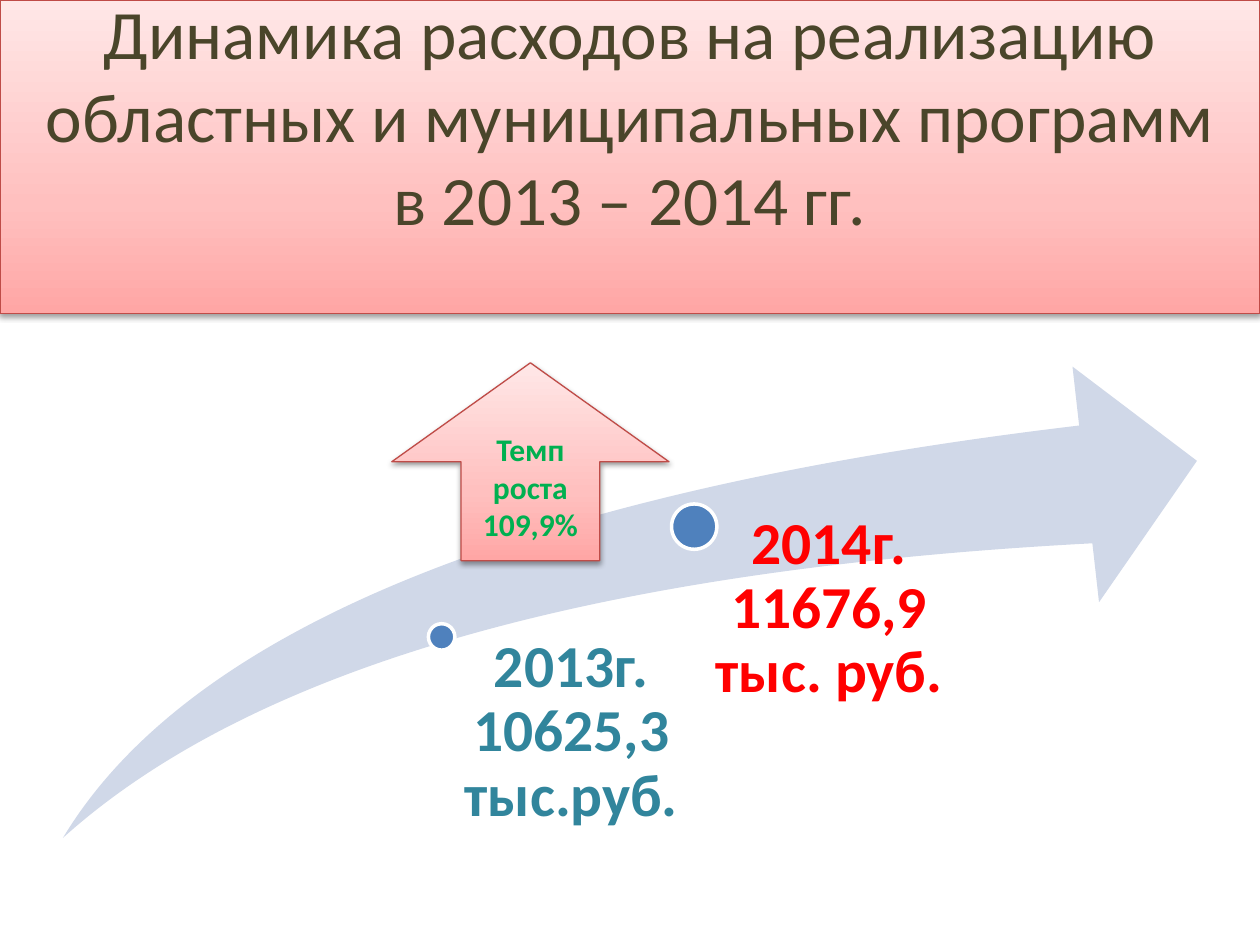
"""Build a slide on the growth of programme spending in 2013–2014."""
from copy import deepcopy

from lxml import etree
from pptx import Presentation
from pptx import util as u
from pptx.dml.color import RGBColor
from pptx.enum import shapes, text
from pptx.oxml.ns import qn

COLORS = {
    "swoosh": "D0D8E8", "marker": "4F81BD", "white": "FFFFFF",
    "border": "BF4C48", "shadow": "000000", "title": "4A452A",
    "year_2013": "31859C", "year_2014": "FF0000", "growth": "00B050",
}
GRADIENT = [(0, "FFA6A5"), (0.35, "FFC0BF"), (1, "FFE7E7")]


def write_text(shape, content, color, size, bold=False, spacing=None, after=None,
               anchor=text.MSO_ANCHOR.TOP, insets=(0.1, 0.05, 0.1, 0.05)):
    frame = shape.text_frame
    frame.word_wrap = True
    frame.auto_size = text.MSO_AUTO_SIZE.NONE
    frame.vertical_anchor = anchor
    (frame.margin_left, frame.margin_top,
     frame.margin_right, frame.margin_bottom) = map(u.Inches, insets)
    frame.text = content
    for paragraph in frame.paragraphs:
        paragraph.alignment = text.PP_ALIGN.CENTER
        paragraph.line_spacing = spacing
        paragraph.space_after = after
        for run in paragraph.runs:
            run.font.name = "Calibri"
            run.font.size = u.Pt(size)
            run.font.bold = bold
            run.font.color.rgb = RGBColor.from_string(COLORS[color])


def style_panel(shape):
    shape.fill.gradient()
    shape.fill.gradient_angle = 90
    properties = shape._element.spPr
    stop_list = properties.find(".//" + qn("a:gsLst"))
    stop_list.append(deepcopy(stop_list[0]))
    for stop, (position, color) in zip(shape.fill.gradient_stops, GRADIENT):
        stop.position = position
        stop.color.rgb = RGBColor.from_string(color)
    shape.line.color.rgb = RGBColor.from_string(COLORS["border"])
    shape.line.width = u.Pt(0.75)
    shape.shadow.inherit = False
    shadow = etree.SubElement(
        properties.find(qn("a:effectLst")), qn("a:outerShdw"),
        blurRad=str(u.Pt(3.1)), dist=str(u.Pt(1.6)), dir="5400000", rotWithShape="0")
    shadow_color = etree.SubElement(shadow, qn("a:srgbClr"), val=COLORS["shadow"])
    etree.SubElement(shadow_color, qn("a:alpha"), val="38000")


presentation = Presentation()
presentation.slide_width = u.Inches(10)
presentation.slide_height = u.Inches(7.5)
slide = presentation.slides.add_slide(presentation.slide_layouts[5])

title = slide.shapes.title
title.left, title.top, title.width, title.height = map(u.Inches, (0, 0, 10, 2.49))
style_panel(title)
write_text(title, "Динамика расходов на реализацию областных и муниципальных программ\n"
           "в 2013 – 2014 гг.", "title", 39.6,
           anchor=text.MSO_ANCHOR.MIDDLE, insets=(0.1, 0, 0.1, 0.67))

swoosh = slide.shapes.add_shape(
    shapes.MSO_SHAPE.SWOOSH_ARROW, *map(u.Inches, (0.5, 2.91, 9, 3.74)))
swoosh.adjustments[0] = 0.25
swoosh.adjustments[1] = 0.25
swoosh.shadow.inherit = False
swoosh.fill.solid()
swoosh.fill.fore_color.rgb = RGBColor.from_string(COLORS["swoosh"])
swoosh.line.fill.background()

milestones = [
    ((3.4, 4.95, 0.21, 0.21), (3.51, 5.05, 1.94, 1.6), 0.11,
     "2013г. 10625,3 тыс.руб.", "year_2013"),
    ((5.33, 4, 0.36, 0.36), (5.44, 4.07, 2.09, 2.68), 0.19,
     "2014г. 11676,9 тыс. руб.", "year_2014"),
]
for marker_box, label_box, inset, content, color in milestones:
    marker = slide.shapes.add_shape(shapes.MSO_SHAPE.OVAL, *map(u.Inches, marker_box))
    marker.shadow.inherit = False
    marker.fill.solid()
    marker.fill.fore_color.rgb = RGBColor.from_string(COLORS["marker"])
    marker.line.color.rgb = RGBColor.from_string(COLORS["white"])
    marker.line.width = u.Pt(2)
    label = slide.shapes.add_textbox(*map(u.Inches, label_box))
    write_text(label, content, color, 34, bold=True, spacing=0.9,
               after=u.Pt(12), insets=(inset, 0, 0, 0))

growth_arrow = slide.shapes.add_shape(
    shapes.MSO_SHAPE.UP_ARROW, *map(u.Inches, (3.11, 2.88, 2.2, 1.57)))
style_panel(growth_arrow)
write_text(growth_arrow, "Темп роста 109,9%", "growth", 18, bold=True,
           anchor=text.MSO_ANCHOR.MIDDLE)

presentation.save("out.pptx")
